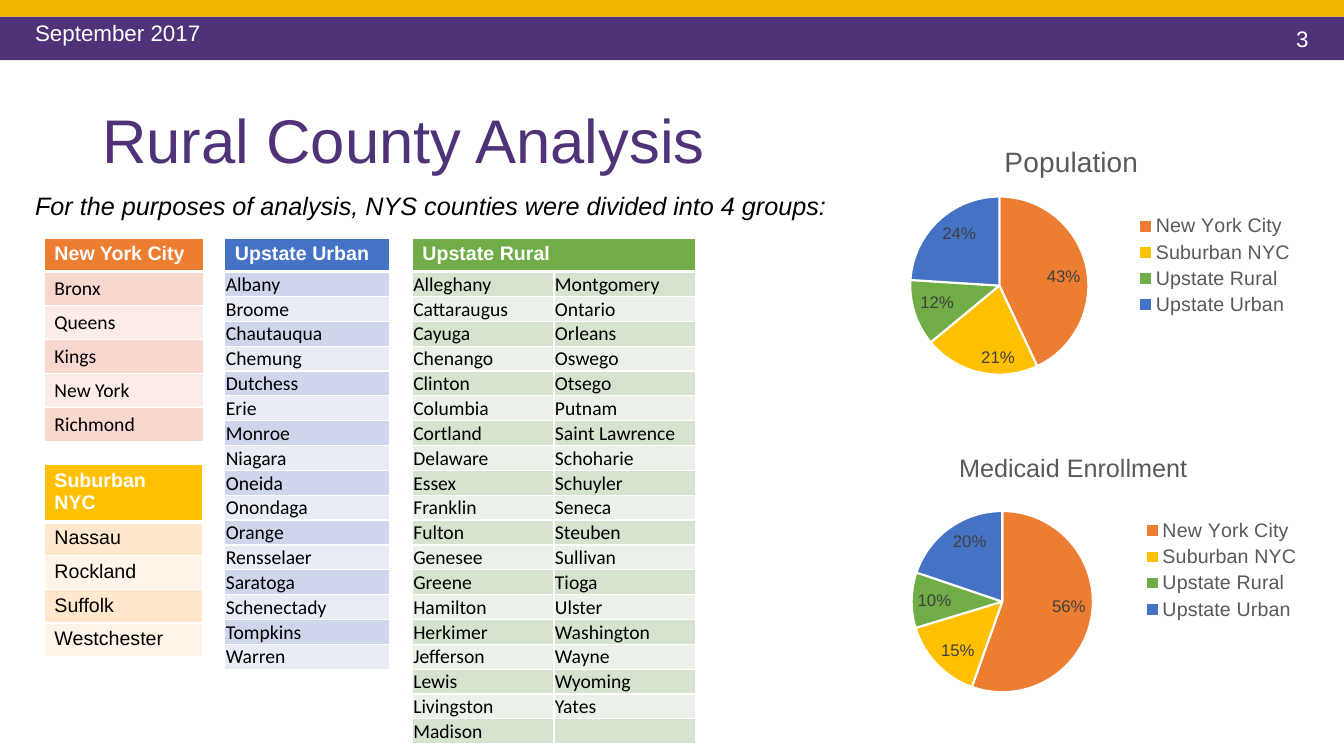
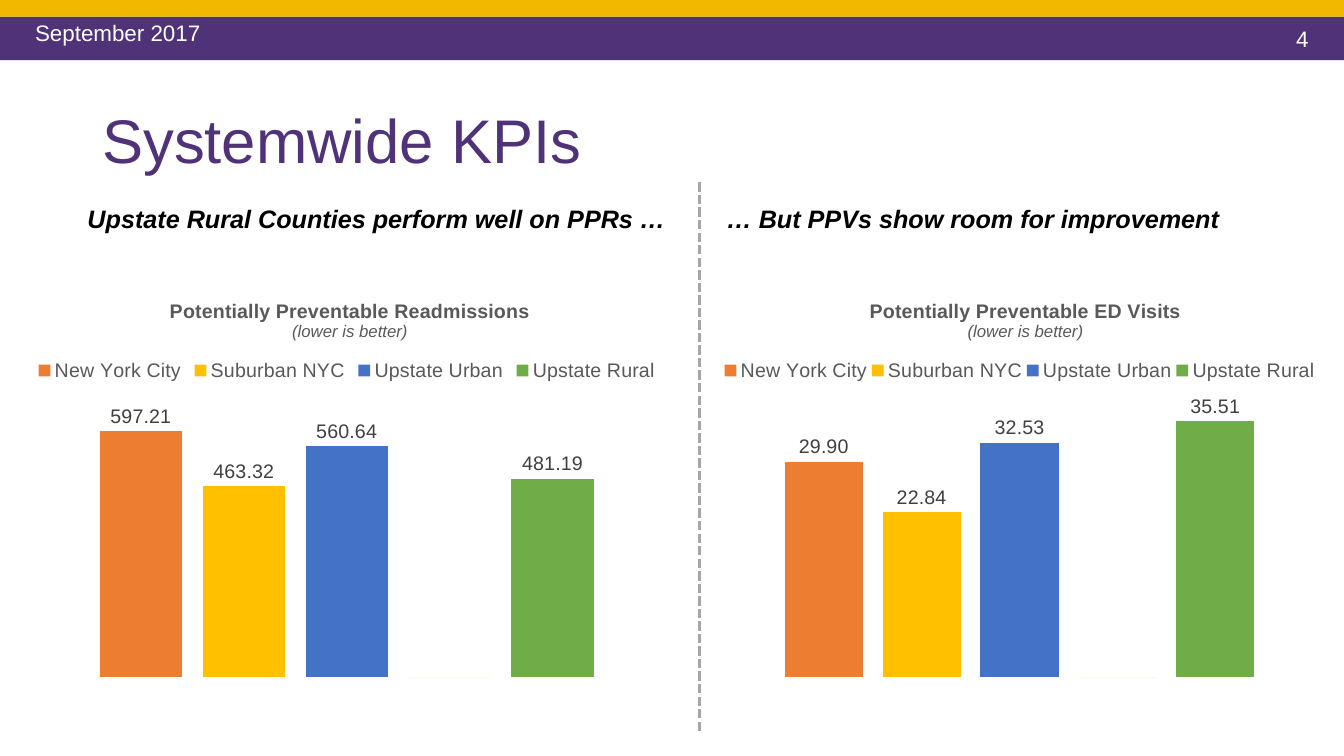
from lxml import etree
from pptx import Presentation
from pptx.chart import data
from pptx.dml.color import RGBColor
from pptx.enum import chart as ch, dml, shapes, text
from pptx.oxml import ns
from pptx.util import Pt

PURPLE = RGBColor(0x50, 0x32, 0x78)
GOLD = RGBColor(0xF2, 0xB8, 0x00)
WHITE = RGBColor(0xFF, 0xFF, 0xFF)
BLACK = RGBColor(0, 0, 0)
GRAY = RGBColor(0x59, 0x59, 0x59)
DARK = RGBColor(0x40, 0x40, 0x40)
RULE = RGBColor(0xA6, 0xA6, 0xA6)
ORANGE = RGBColor(0xED, 0x7D, 0x31)
YELLOW = RGBColor(0xFF, 0xC0, 0x00)
GREEN = RGBColor(0x70, 0xAD, 0x47)
BLUE = RGBColor(0x44, 0x72, 0xC4)
PEACH = (RGBColor(0xF8, 0xD7, 0xCE), RGBColor(0xFC, 0xEC, 0xE8))
CREAM = (RGBColor(0xFF, 0xE8, 0xCC), RGBColor(0xFF, 0xF4, 0xE7))
SKY = (RGBColor(0xCF, 0xD5, 0xEA), RGBColor(0xE9, 0xEB, 0xF5))
MINT = (RGBColor(0xD5, 0xE3, 0xCF), RGBColor(0xEB, 0xF1, 0xE9))

WIDTH, HEIGHT = 960, 540
DATE = "September 2017"
CITY, SUBURB, URBAN, RURAL = "New York City", "Suburban NYC", "Upstate Urban", "Upstate Rural"
TINTS = {CITY: ORANGE, SUBURB: YELLOW, RURAL: GREEN, URBAN: BLUE}

TABLES = [
    dict(name=CITY, at=(31.7, 170), wide=113.8, head=22.8, row=24.3, bands=PEACH,
         cols=[["Bronx", "Queens", "Kings", "New York", "Richmond"]]),
    dict(name=SUBURB, at=(31.7, 332), wide=113, head=39, row=23, bands=CREAM, font="Arial",
         cols=[["Nassau", "Rockland", "Suffolk", "Westchester"]]),
    dict(name=URBAN, at=(160.6, 170), wide=118, head=22.8, row=17.75, bands=SKY, tight=True,
         cols=[["Albany", "Broome", "Chautauqua", "Chemung", "Dutchess", "Erie", "Monroe",
                "Niagara", "Oneida", "Onondaga", "Orange", "Rensselaer", "Saratoga",
                "Schenectady", "Tompkins", "Warren"]]),
    dict(name=RURAL, at=(294.5, 170), wide=101.2, head=22.8, row=17.75, bands=MINT, tight=True,
         cols=[["Alleghany", "Cattaraugus", "Cayuga", "Chenango", "Clinton", "Columbia",
                "Cortland", "Delaware", "Essex", "Franklin", "Fulton", "Genesee", "Greene",
                "Hamilton", "Herkimer", "Jefferson", "Lewis", "Livingston", "Madison"],
               ["Montgomery", "Ontario", "Orleans", "Oswego", "Otsego", "Putnam",
                "Saint Lawrence", "Schoharie", "Schuyler", "Seneca", "Steuben", "Sullivan",
                "Tioga", "Ulster", "Washington", "Wayne", "Wyoming", "Yates", ""]]),
]

PIES = [
    dict(name="Medicaid Enrollment", at=(593.3, 304.6, 340.6, 205.2), vals=(56, 15, 10, 20),
         size=18, title=(0.26, 0.07), plot=(0.17, 0.29, 0.38, 0.64)),
    dict(name="Population", at=(593.3, 87.1, 334.8, 205.2), vals=(43, 21, 12, 24),
         size=20, title=(0.36, 0.06), plot=(0.17, 0.26, 0.38, 0.62)),
]

SPACER = "Series 4"
BARS = [
    dict(name="Potentially Preventable Readmissions", at=(18, 199.4, 459.4, 290.2), top=700,
         title=(0.22, 0.04), vals=(597.21, 463.32, 560.64, 0, 481.19)),
    dict(name="Potentially Preventable ED Visits", at=(509.8, 199.4, 437, 290.2), top=40,
         title=(0.25, 0.04), vals=(29.9, 22.84, 32.53, 0, 35.51)),
]
NOTE = "(lower is better)"
CLAIMS = [
    ("Upstate Rural Counties perform well on PPRs …", 55.4),
    ("… But PPVs show room for improvement", 511.9),
]


def style(font, size, color, bold=False, italic=False, name="Arial"):
    font.size, font.name, font.bold, font.italic = Pt(size), name, bold, italic
    font.color.rgb = color


def put(par, words, size=14, color=BLACK, align=None, space=None, **fmt):
    if words:
        run = par.add_run()
        run.text = words
        style(run.font, size, color, **fmt)
    else:
        par._p.get_or_add_endParaRPr().set("sz", str(size * 100))
    if align:
        par.alignment = align
    if space:
        par.line_spacing = space


def label(slide, words, at, anchor=text.MSO_ANCHOR.TOP, **fmt):
    frame = slide.shapes.add_textbox(*map(Pt, at)).text_frame
    frame.word_wrap = True
    frame.vertical_anchor = anchor
    put(frame.paragraphs[0], words, **fmt)


def start(deck, title, number):
    slide = deck.slides.add_slide(deck.slide_layouts[6])
    for y, high, color in ((12, 31, PURPLE), (0, 12, GOLD)):
        band = slide.shapes.add_shape(shapes.MSO_SHAPE.RECTANGLE, 0, Pt(y), Pt(WIDTH), Pt(high))
        band.shadow.inherit = False
        band.fill.solid()
        band.fill.fore_color.rgb = color
        band.line.fill.background()
    label(slide, str(number), (679, 14.4, 262.8, 26.6), size=16, color=WHITE,
          align=text.PP_ALIGN.RIGHT)
    label(slide, title, (66, 61, 828, 83), anchor=text.MSO_ANCHOR.MIDDLE, size=44,
          color=PURPLE, space=0.9)
    label(slide, DATE, (18, 12, 300, 31), size=16, color=WHITE, space=0.9)
    return slide


def paint(cell, color, base=1):
    props = cell._tc.get_or_add_tcPr()
    for side in "LRTB":
        line = etree.SubElement(props, ns.qn("a:ln" + side))
        line.set("w", str(Pt(base if side == "B" else 1)))
        fill = etree.SubElement(line, ns.qn("a:solidFill"))
        etree.SubElement(fill, ns.qn("a:srgbClr")).set("val", str(WHITE))
    cell.fill.solid()
    cell.fill.fore_color.rgb = color


def grid(slide, name, at, wide, head, row, bands, cols, font="Calibri", tight=False):
    count = len(cols[0])
    size = wide * len(cols), head + row * count
    table = slide.shapes.add_table(count + 1, len(cols), *map(Pt, at + size)).table
    table.horz_banding = False
    for r in range(count + 1):
        table.rows[r].height = Pt(row if r else head)
    for c, names in enumerate(cols):
        table.columns[c].width = Pt(wide)
        paint(table.cell(0, c), TINTS[name], base=3)
        for r, county in enumerate(names):
            cell = table.cell(r + 1, c)
            paint(cell, bands[r % 2])
            if tight:
                cell.margin_left = cell.margin_right = cell.margin_top = Pt(0.72)
                cell.margin_bottom = 0
                cell.vertical_anchor = text.MSO_ANCHOR.BOTTOM
            put(cell.text_frame.paragraphs[0], county, name=font)
    first = table.cell(0, 0)
    if len(cols) > 1:
        first.merge(table.cell(0, len(cols) - 1))
    put(first.text_frame.paragraphs[0], name, color=WHITE, bold=True)


def place(part, spots, inner=False):
    for old in part.findall(ns.qn("c:layout")):
        part.remove(old)
    layout = etree.Element(ns.qn("c:layout"))
    manual = etree.SubElement(layout, ns.qn("c:manualLayout"))
    pairs = [("layoutTarget", "inner")] if inner else []
    pairs += [("xMode", "edge"), ("yMode", "edge"), *zip("xywh", spots)]
    for key, val in pairs:
        etree.SubElement(manual, ns.qn("c:" + key)).set("val", str(val))
    after = part.find(ns.qn("c:overlay"))
    if after is None:
        part.insert(0, layout)
    else:
        after.addprevious(layout)


def plot(slide, kind, info, at, lines, title, area, side, key):
    chart = slide.shapes.add_chart(kind, *map(Pt, at), info).chart
    style(chart.font, 10, BLACK)
    chart.has_title = True
    frame = chart.chart_title.text_frame
    for i, (words, fmt) in enumerate(lines):
        par = frame.add_paragraph() if i else frame.paragraphs[0]
        put(par, words, color=GRAY, **fmt)
    chart.has_legend = True
    chart.legend.position = side
    chart.legend.include_in_layout = False
    style(chart.legend.font, 14, GRAY)
    place(chart.chart_title._element, title)
    place(chart.legend._element, key)
    place(chart._chartSpace.chart.plotArea, area, inner=True)
    return chart


def tag(labels, size, form, spot):
    style(labels.font, size, DARK)
    labels.show_value = True
    labels.number_format = form
    labels.number_format_is_linked = False
    labels.position = spot


def pie(slide, name, at, vals, size, title, plot_area):
    info = data.CategoryChartData()
    info.categories = list(TINTS)
    info.add_series(name, vals)
    chart = plot(slide, ch.XL_CHART_TYPE.PIE, info, at, [(name, dict(size=size))], title,
                 plot_area, ch.XL_LEGEND_POSITION.RIGHT, (0.65, 0.31, 0.34, 0.38))
    series = chart.plots[0].series[0]
    for i, color in enumerate(TINTS.values()):
        form = series.points[i].format
        form.fill.solid()
        form.fill.fore_color.rgb = color
        form.line.color.rgb = WHITE
        form.line.width = Pt(1.5)
    tag(series.data_labels, 12, '0"%"', ch.XL_LABEL_POSITION.INSIDE_END)


def bars(slide, name, at, top, title, vals):
    info = data.CategoryChartData()
    info.categories = ["1"]
    for group, val in zip((CITY, SUBURB, URBAN, SPACER, RURAL), vals):
        info.add_series(group, [val])
    lines = [(name, dict(bold=True)), (NOTE, dict(size=12, italic=True))]
    chart = plot(slide, ch.XL_CHART_TYPE.COLUMN_CLUSTERED, info, at, lines, title,
                 (0.02, 0.27, 0.96, 0.71), ch.XL_LEGEND_POSITION.TOP, (0.01, 0.19, 0.98, 0.07))
    entry = etree.Element(ns.qn("c:legendEntry"))
    etree.SubElement(entry, ns.qn("c:idx")).set("val", "3")
    etree.SubElement(entry, ns.qn("c:delete")).set("val", "1")
    chart.legend._element.find(ns.qn("c:legendPos")).addnext(entry)
    axis = chart.value_axis
    axis.minimum_scale, axis.maximum_scale = 0, top
    axis.has_major_gridlines = False
    axis.visible = chart.category_axis.visible = False
    body = chart.plots[0]
    body.vary_by_categories = False
    body.gap_width, body.overlap = 150, -25
    for series in body.series:
        series.format.fill.solid()
        series.format.fill.fore_color.rgb = TINTS.get(series.name, YELLOW)
        if series.name != SPACER:
            tag(series.data_labels, 14, "#,##0.00", ch.XL_LABEL_POSITION.OUTSIDE_END)


def main():
    deck = Presentation()
    deck.slide_width, deck.slide_height = Pt(WIDTH), Pt(HEIGHT)

    slide = start(deck, "Rural County Analysis", 3)
    label(slide, "For the purposes of analysis, NYS counties were divided into 4 groups:",
          (18, 134.6, 589, 34.6), size=18, italic=True, space=0.9)
    for item in TABLES:
        grid(slide, **item)
    for item in PIES:
        pie(slide, item["name"], item["at"], item["vals"], item["size"], item["title"],
            item["plot"])

    slide = start(deck, "Systemwide KPIs", 4)
    for words, x in CLAIMS:
        label(slide, words, (x, 144, 447, 34.6), size=18, bold=True, italic=True, space=0.9)
    rule = slide.shapes.add_connector(shapes.MSO_CONNECTOR.STRAIGHT, Pt(499.7), Pt(130.3),
                                      Pt(499.7), Pt(523.4))
    rule.line.color.rgb = RULE
    rule.line.width = Pt(2.25)
    rule.line.dash_style = dml.MSO_LINE.SQUARE_DOT
    etree.SubElement(rule._element.spPr, ns.qn("a:effectLst"))
    for item in BARS:
        bars(slide, **item)

    deck.save("out.pptx")


if __name__ == "__main__":
    main()
